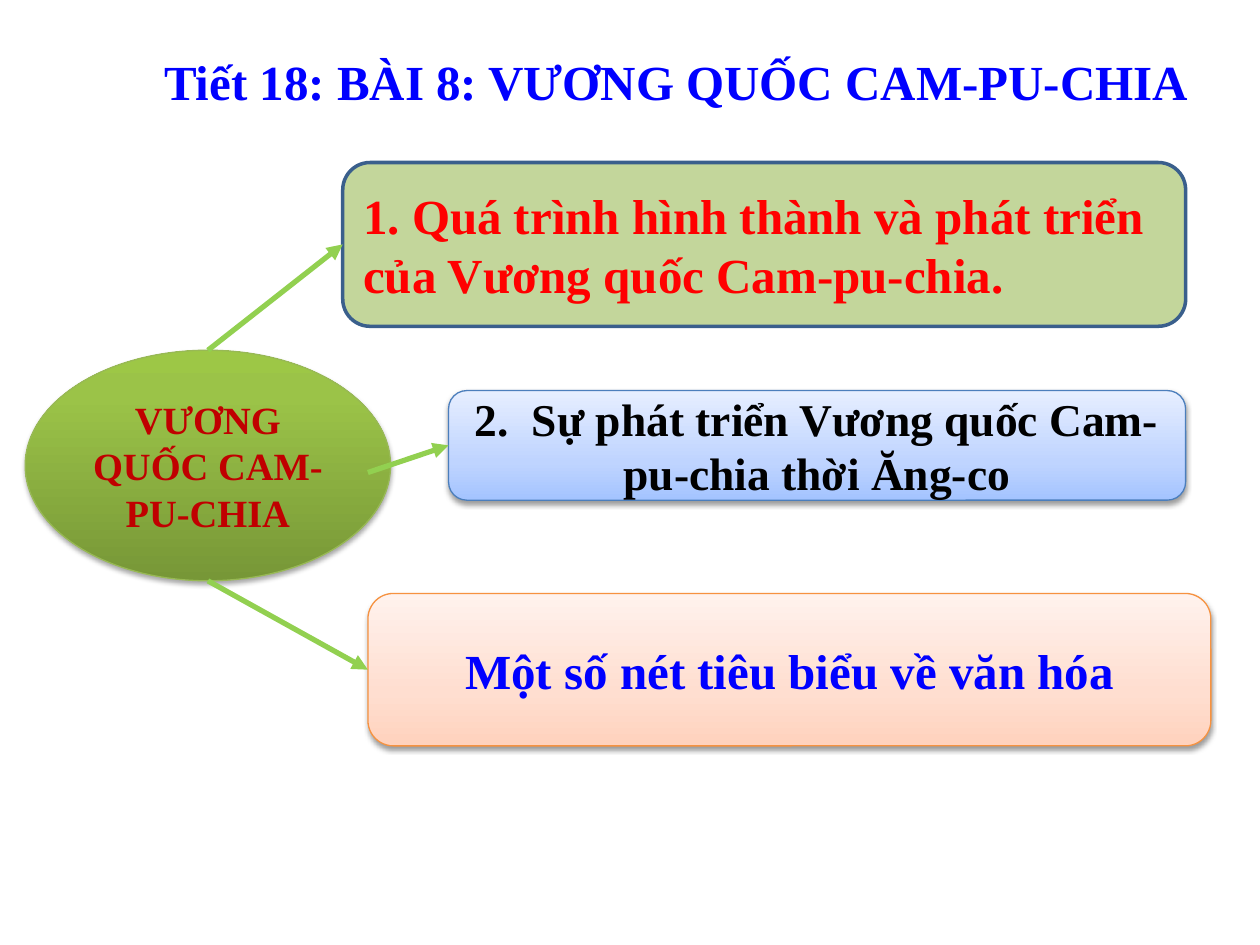
from lxml.etree import SubElement
from pptx import Presentation
from pptx.dml.color import RGBColor
from pptx.enum.shapes import MSO_CONNECTOR as Connector, MSO_SHAPE as Shape
from pptx.enum.text import MSO_ANCHOR as Anchor, PP_ALIGN as Align
from pptx.oxml.ns import qn
from pptx.util import Inches, Pt

FONT = "Times New Roman"
ARROW_GREEN = "92D050"


def color(hex_value):
    return RGBColor.from_string(hex_value)


def write(frame, text, size, hex_value, align=Align.CENTER):
    frame.word_wrap = True
    paragraph = frame.paragraphs[0]
    paragraph.text = text
    paragraph.alignment = align
    font = paragraph.runs[0].font
    font.name, font.size, font.bold = FONT, Pt(size), True
    font.color.rgb = color(hex_value)


def add_color(parent, hex_value):
    return SubElement(parent, qn("a:srgbClr"), val=hex_value)


def fill_upward(shape, stops):
    """Gradient running from the bottom edge to the top."""
    shape.fill.gradient()
    gradient = shape._element.spPr.find(qn("a:gradFill"))
    for child in list(gradient):
        gradient.remove(child)
    stop_list = SubElement(gradient, qn("a:gsLst"))
    for position, hex_value in stops:
        stop = SubElement(stop_list, qn("a:gs"), pos=str(position * 1000))
        add_color(stop, hex_value)
    SubElement(gradient, qn("a:lin"), ang=str(270 * 60000), scaled="0")


def drop_shadow(shape, opacity, distance):
    effects = shape._element.spPr.find(qn("a:effectLst"))
    shadow = SubElement(effects, qn("a:outerShdw"), blurRad=str(Pt(3.1)),
                        dist=str(Pt(distance)), dir=str(90 * 60000),
                        rotWithShape="0")
    SubElement(add_color(shadow, "000000"), qn("a:alpha"),
               val=str(opacity * 1000))


def add_title(slide, box, text):
    title = slide.shapes.add_textbox(*map(Inches, box))
    write(title.text_frame, text, 28, "0000FF")


def add_node(slide, kind, box, fill, line, label, shadow=None):
    """A mind-map node; fill is one colour or a list of gradient stops."""
    node = slide.shapes.add_shape(kind, *map(Inches, box))
    node.shadow.inherit = False
    if isinstance(fill, str):
        node.fill.solid()
        node.fill.fore_color.rgb = color(fill)
    else:
        fill_upward(node, fill)
    line_color, line_width = line
    node.line.color.rgb = color(line_color)
    node.line.width = Pt(line_width)
    if shadow:
        drop_shadow(node, *shadow)
    node.text_frame.vertical_anchor = Anchor.MIDDLE
    write(node.text_frame, *label)


def add_arrow(slide, start, end):
    arrow = slide.shapes.add_connector(Connector.STRAIGHT,
                                       *map(Inches, start + end))
    arrow.line.color.rgb = color(ARROW_GREEN)
    arrow.line.width = Pt(3)
    SubElement(arrow.line._get_or_add_ln(), qn("a:tailEnd"), type="triangle")
    SubElement(arrow._element.spPr, qn("a:effectLst"))


def add_mind_map(slide, hub, topics):
    # Central topic
    add_node(slide, Shape.OVAL, hub,
             [(0, "779737"), (80, "9BC348"), (100, "9DC746")], ("98B955", 0.75),
             ("VƯƠNG QUỐC CAM-PU-CHIA", 22, "C00000"), (35, 1.8))

    # Lesson sections
    for topic in topics:
        add_node(slide, Shape.ROUNDED_RECTANGLE, *topic)

    # Arrows from the hub to the middle of each section's left edge
    left, top, width, height = hub
    center = left + width / 2
    starts = [(center, top), (2.92, 3.75), (center, top + height)]
    for start, (box, *_) in zip(starts, topics):
        add_arrow(slide, start, (box[0], box[1] + box[3] / 2))


def main():
    deck = Presentation()
    deck.slide_width, deck.slide_height = Inches(10), Inches(7.5)
    slide = deck.slides.add_slide(deck.slide_layouts[6])

    topics = [
        ((2.72, 1.29, 6.69, 1.3), "C3D69B", ("3A5F8C", 2),
         ("1. Quá trình hình thành và phát triển của Vương quốc Cam-pu-chia.",
          28, "FF0000", Align.LEFT)),
        ((3.56, 3.1, 5.85, 0.87),
         [(0, "A4C4FF"), (35, "BFD4FF"), (100, "E6EEFF")], ("4B7EBC", 0.75),
         ("2.  Sự phát triển Vương quốc Cam-pu-chia thời Ăng-co", 26, "000000"),
         (38, 1.6)),
        ((2.92, 4.71, 6.69, 1.21),
         [(0, "FFD2BD"), (35, "FFDED0"), (100, "FFF2ED")], ("F69240", 0.75),
         ("Một số nét tiêu biểu về văn hóa", 28, "0000FF"), (38, 1.6)),
    ]
    add_title(slide, (0.98, 0.36, 8.77, 0.57),
              "Tiết 18: BÀI 8: VƯƠNG QUỐC CAM-PU-CHIA")
    add_mind_map(slide, (0.2, 2.78, 2.9, 1.83), topics)
    deck.save("out.pptx")


if __name__ == "__main__":
    main()
